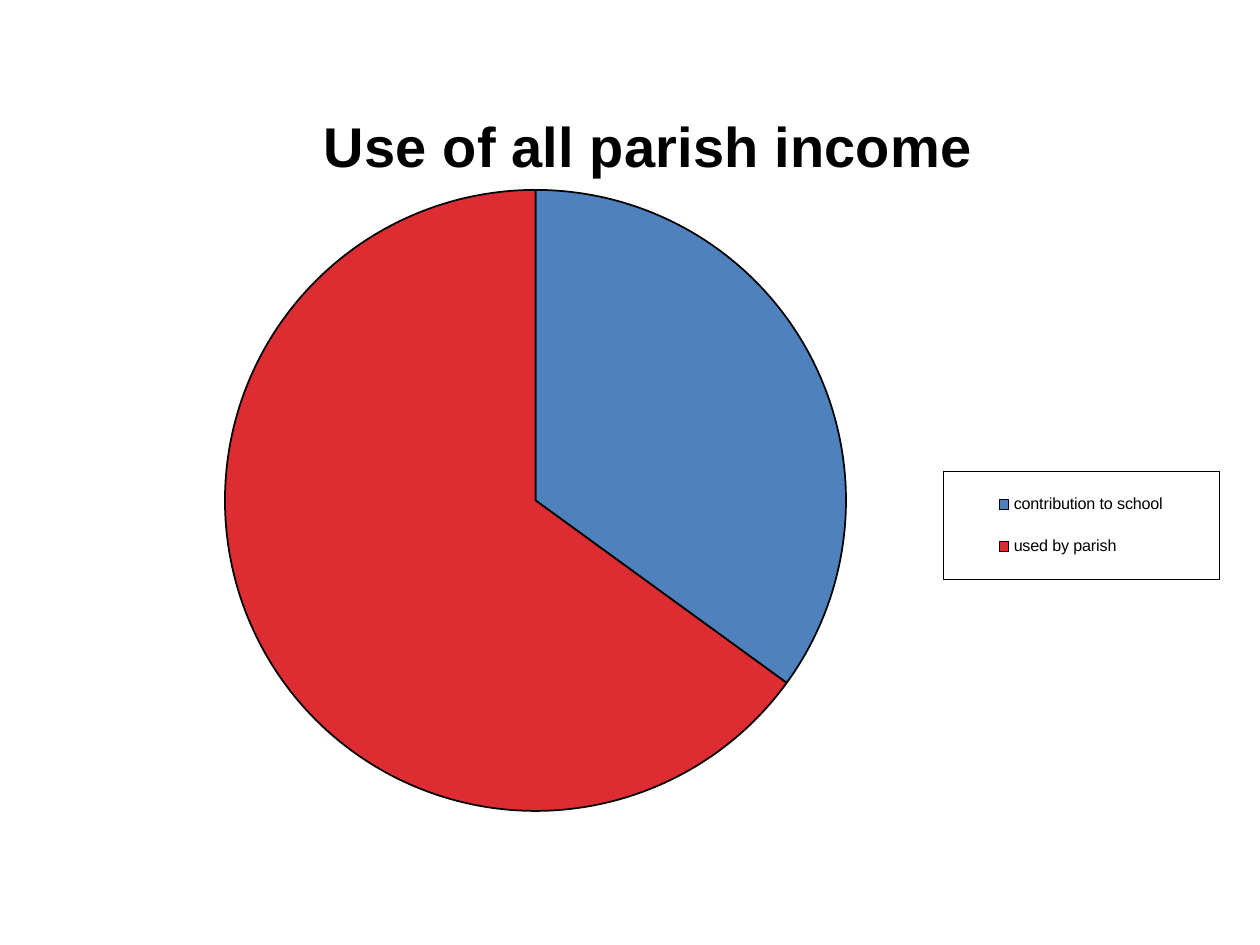
import pptx
import pptx.chart.data
import pptx.dml.color
import pptx.enum.chart
import pptx.oxml
import pptx.oxml.ns
import pptx.util

BLACK = "000000"
CHART_NS = pptx.oxml.ns.nsdecls("c", "a")


def color(hex_text):
    return pptx.dml.color.RGBColor.from_string(hex_text)


def place(parent, x, y, width=None, height=None, inner=False):
    """Give a chart part a manual layout in shares of the chart's size."""
    for old in parent.xpath("c:layout"):
        parent.remove(old)
    target = '<c:layoutTarget val="inner"/>' if inner else ""
    modes = '<c:xMode val="edge"/><c:yMode val="edge"/>'
    shares = {"x": x, "y": y, "w": width, "h": height}
    values = "".join(f'<c:{key} val="{share}"/>'
                     for key, share in shares.items() if share is not None)
    layout = pptx.oxml.parse_xml(
        f"<c:layout {CHART_NS}><c:manualLayout>{target}{modes}{values}"
        "</c:manualLayout></c:layout>")
    overlays = parent.xpath("c:overlay")
    if overlays:
        overlays[0].addprevious(layout)
    else:
        parent.insert(0, layout)


class SlideBuilder:
    font_name = "Arial"

    def __init__(self, deck):
        self.deck = deck
        self.slide = deck.slides.add_slide(deck.slide_layouts[6])

    def style(self, font, size, bold=False):
        font.name = self.font_name
        font.size = pptx.util.Pt(size)
        font.bold = bold
        font.color.rgb = color(BLACK)

    def pie(self, shares, series_name, slices):
        """Add a pie chart; slices holds (label, value, colour)."""
        data = pptx.chart.data.CategoryChartData()
        data.categories = [label for label, value, fill in slices]
        data.add_series(series_name, [value for label, value, fill in slices])
        left, top, width, height = shares
        page_width, page_height = self.deck.slide_width, self.deck.slide_height
        chart = self.slide.shapes.add_chart(
            pptx.enum.chart.XL_CHART_TYPE.PIE,
            int(left * page_width), int(top * page_height),
            int(width * page_width), int(height * page_height), data).chart
        self.style(chart.font, 10)
        plot = chart.plots[0]
        plot.vary_by_categories = True
        for index, (label, value, fill) in enumerate(slices):
            part = plot.series[0].points[index].format
            part.fill.solid()
            part.fill.fore_color.rgb = color(fill)
            part.line.color.rgb = color(BLACK)
            part.line.width = pptx.util.Pt(1)
        return chart

    def title(self, chart, text, x, y):
        chart.has_title = True
        title = chart.chart_title
        para = title.text_frame.paragraphs[0]
        para.text = text
        self.style(para.font, 32, bold=True)
        self.style(para.runs[0].font, 32, bold=True)
        place(title._element, x, y)

    def legend(self, chart, x, y, width, height):
        chart.has_legend = True
        legend = chart.legend
        legend.position = pptx.enum.chart.XL_LEGEND_POSITION.RIGHT
        legend.include_in_layout = False
        self.style(legend.font, 9.2)
        place(legend._element, x, y, width, height)
        # Thin black frame
        frame = pptx.oxml.parse_xml(
            f'<c:spPr {CHART_NS}><a:solidFill><a:srgbClr val="FFFFFF"/></a:solidFill>'
            f'<a:ln w="3175"><a:solidFill><a:srgbClr val="{BLACK}"/></a:solidFill>'
            "</a:ln></c:spPr>")
        legend._element.xpath("c:overlay")[0].addnext(frame)


def main():
    deck = pptx.Presentation()
    deck.slide_width = pptx.util.Inches(10)
    deck.slide_height = pptx.util.Inches(7.5)
    page = SlideBuilder(deck)

    # Pie of parish income
    chart = page.pie((0.033, 0.067, 0.939, 0.852), "Series 1", [
        ("contribution to school", 35, "4F81BD"),
        ("used by parish", 65, "DD2D32"),
    ])
    plot_area = chart._chartSpace.xpath("c:chart/c:plotArea")[0]
    place(plot_area, 0.155, 0.157, 0.525, 0.772, inner=True)

    # Heading and key
    page.title(chart, "Use of all parish income", 0.23, 0.045)
    page.legend(chart, 0.762, 0.507, 0.233, 0.134)

    deck.save("out.pptx")


if __name__ == "__main__":
    main()
